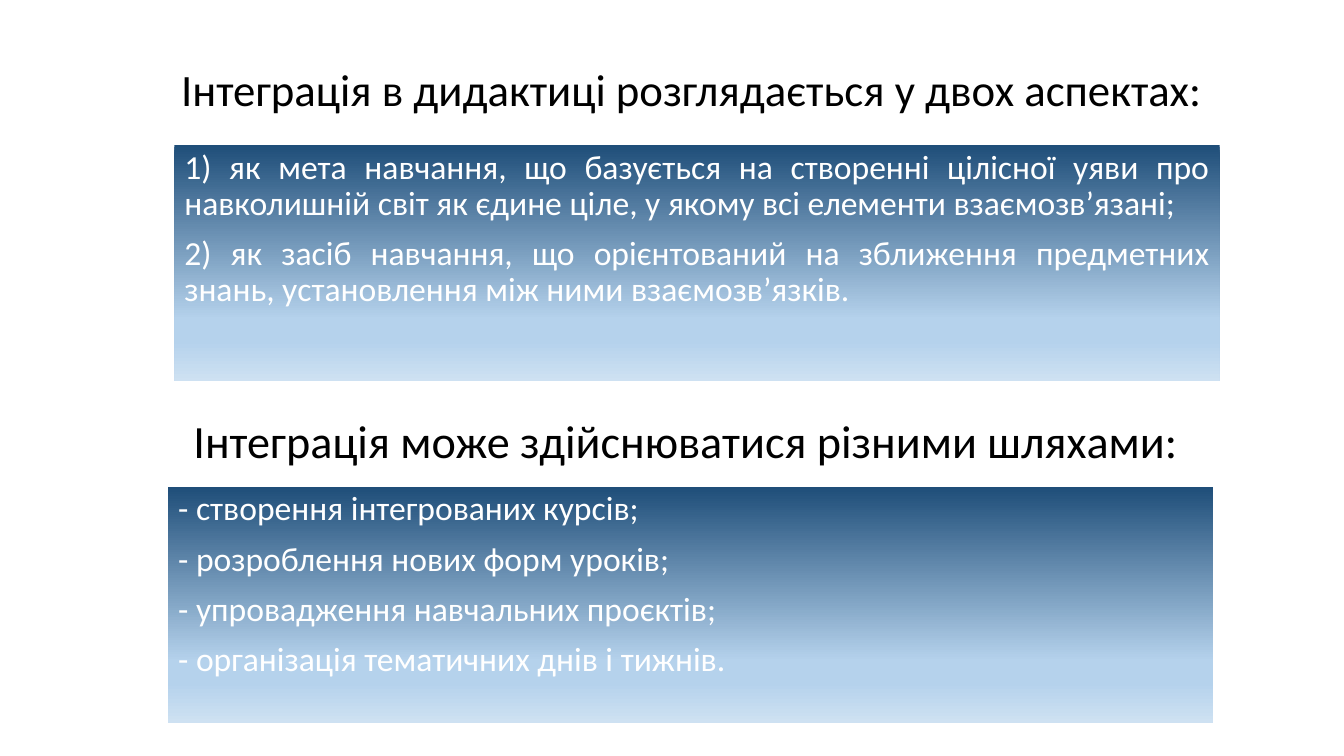
"""Build a slide on the aspects and ways of integration in didactics."""
from lxml.etree import SubElement
from pptx import Presentation
from pptx.dml.color import RGBColor
from pptx.enum.shapes import MSO_SHAPE
from pptx.enum.text import MSO_ANCHOR, MSO_AUTO_SIZE, PP_ALIGN
from pptx.oxml.ns import qn
from pptx.util import Pt

FONT = "Calibri"
GRADIENT = [(0, "1F4E79"), (74, "B5D2EC"), (83, "B5D2EC"), (100, "CEE1F2")]
HEADING_SIZE = (755.3, 53.3)
PANEL_SIZE = (746.6, 168.5)
SECTIONS = [
    {
        "heading": "Інтеграція в дидактиці розглядається у двох аспектах: ",
        "heading_at": (120.2, 33.1), "size": 32, "spacing": 0.9,
        "panel_at": (124.6, 103.7),
        "items": [
            "1) як мета навчання, що базується на створенні цілісної уяви про "
            "навколишній світ як єдине ціле, у якому всі елементи взаємозв’язані; ",
            "2) як засіб навчання, що орієнтований на зближення предметних "
            "знань, установлення між ними взаємозв’язків.",
        ],
    },
    {
        "heading": "Інтеграція може здійснюватися різними шляхами: ",
        "heading_at": (115.9, 283.7), "size": 33, "spacing": 0.7,
        "panel_at": (120.2, 347.8),
        "items": [
            "- створення інтегрованих курсів; ",
            "- розроблення нових форм уроків;",
            "- упровадження навчальних проєктів; ",
            "- організація тематичних днів і тижнів. ",
        ],
    },
]


def rgb(color):
    return RGBColor.from_string(color)


def box(at, size):
    return [Pt(v) for v in at + size]


def write(sp, lines, size, color, align, spacing, anchor):
    tf = sp.text_frame
    tf.word_wrap = True
    tf.auto_size = MSO_AUTO_SIZE.NONE
    tf.vertical_anchor = anchor
    for i, line in enumerate(lines):
        p = tf.add_paragraph() if i else tf.paragraphs[0]
        p.text = line
        p.alignment = align
        p.line_spacing = spacing
        p.space_before = Pt(10 if i else 0)
        p.font.name = FONT
        p.font.size = Pt(size)
        p.font.color.rgb = rgb(color)


def fill_gradient(sp):
    sp.fill.gradient()
    sp.fill.gradient_angle = 270
    stops = sp.fill._fill._gradFill.find(qn("a:gsLst"))
    for stop in list(stops):
        stops.remove(stop)
    for position, color in GRADIENT:
        stop = SubElement(stops, qn("a:gs"), pos=str(position * 1000))
        SubElement(stop, qn("a:srgbClr"), val=color)


def add_panel(s, at, items):
    sp = s.shapes.add_shape(MSO_SHAPE.RECTANGLE, *box(at, PANEL_SIZE))
    sp.shadow.inherit = False
    sp.line.fill.background()
    fill_gradient(sp)
    write(sp, items, 24, "FFFFFF", PP_ALIGN.JUSTIFY, 0.9, MSO_ANCHOR.TOP)


def main():
    prs = Presentation()
    prs.slide_width, prs.slide_height = Pt(960), Pt(540)
    s = prs.slides.add_slide(prs.slide_layouts[5])
    for i, section in enumerate(SECTIONS):
        place = box(section["heading_at"], HEADING_SIZE)
        sp = s.shapes.add_textbox(*place) if i else s.shapes.title
        sp.left, sp.top, sp.width, sp.height = place
        write(sp, [section["heading"]], section["size"], "000000",
              PP_ALIGN.CENTER, section["spacing"], MSO_ANCHOR.BOTTOM)
        add_panel(s, section["panel_at"], section["items"])
    prs.save("out.pptx")


if __name__ == "__main__":
    main()
